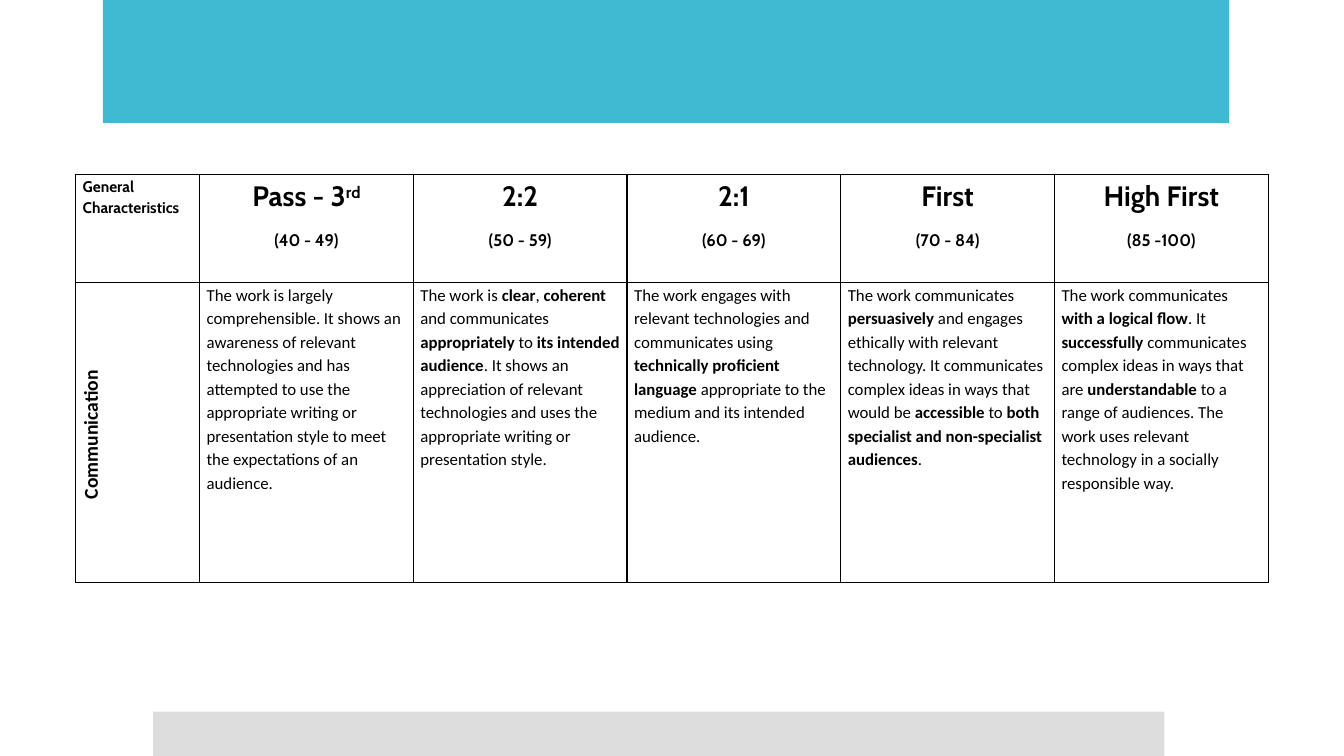
import pptx
import pptx.util
import pptx.dml.color
import pptx.enum.shapes
import pptx.enum.text
import pptx.oxml
import pptx.oxml.ns

COLORS = {"band": "40BAD2", "footer": "DDDDDD", "ink": "000000", "paper": "FFFFFF"}
ALIGN = pptx.enum.text.PP_ALIGN
Inches = pptx.util.Inches
Pt = pptx.util.Pt

presentation = pptx.Presentation()
presentation.slide_width = Inches(13.33)
presentation.slide_height = Inches(7.5)
slide = presentation.slides.add_slide(presentation.slide_layouts[6])


def write_text(paragraph, text, size=12, font="Calibri", bold=False, align=ALIGN.LEFT):
    paragraph.alignment = align
    paragraph.line_spacing = 1.15
    paragraph.space_after = Pt(10)
    for index, piece in enumerate(text.split("*")):
        for level, part in enumerate(piece.split("^")):
            if not part:
                continue
            run = paragraph.add_run()
            run.text = part
            run.font.size = Pt(size)
            run.font.name = font
            run.font.bold = bold or index % 2 == 1
            run.font.color.rgb = pptx.dml.color.RGBColor.from_string(COLORS["ink"])
            if level:
                run.font._element.set("baseline", "30000")


grades = [
    ("Pass - 3^rd", "(40 - 49)",
     "The work is largely comprehensible. It shows an awareness of relevant technologies and has "
     "attempted to use the appropriate writing or presentation style to meet the expectations of "
     "an audience."),
    ("2:2", "(50 - 59)",
     "The work is *clear*, *coherent* and communicates *appropriately* to *its intended audience*. "
     "It shows an appreciation of relevant technologies and uses the appropriate writing or "
     "presentation style."),
    ("2:1", "(60 - 69)",
     "The work engages with relevant technologies and communicates using *technically proficient "
     "language* appropriate to the medium and its intended audience."),
    ("First", "(70 - 84)",
     "The work communicates *persuasively* and engages ethically with relevant technology. It "
     "communicates complex ideas in ways that would be *accessible* to *both specialist and "
     "non-specialist audiences*."),
    ("High First", "(85 -100)",
     "The work communicates *with a logical flow*. It *successfully *communicates complex ideas in "
     "ways that are *understandable* to a range of audiences. The work uses relevant technology in "
     "a socially responsible way."),
]

label_width, grade_width = Inches(1.23), Inches(2.12)
row_heights = [Inches(1.07), Inches(2.98)]
table = slide.shapes.add_table(
    len(row_heights), len(grades) + 1, Inches(0.75), Inches(1.73),
    label_width + grade_width * len(grades), sum(row_heights)).table
table.first_row = False
table.horz_banding = False
for row, height in zip(table.rows, row_heights):
    row.height = height
for index, column in enumerate(table.columns):
    column.width = grade_width if index else label_width

for cell in table.iter_cells():
    cell.margin_left = cell.margin_right = Inches(0.07)
    cell.margin_top = cell.margin_bottom = 0
    cell.fill.solid()
    cell.fill.fore_color.rgb = pptx.dml.color.RGBColor.from_string(COLORS["paper"])
    properties = cell._tc.get_or_add_tcPr()
    for position, side in enumerate(["lnL", "lnR", "lnT", "lnB"]):
        border = pptx.oxml.parse_xml(
            f'<a:{side} {pptx.oxml.ns.nsdecls("a")} w="{Pt(1)}"><a:solidFill>'
            f'<a:srgbClr val="{COLORS["ink"]}"/></a:solidFill></a:{side}>')
        properties.insert(position, border)

write_text(table.cell(0, 0).text_frame.paragraphs[0], "General Characteristics",
           size=11, font="Cabin", bold=True)
communication = table.cell(1, 0)
communication._tc.get_or_add_tcPr().set("vert", "vert270")
write_text(communication.text_frame.paragraphs[0], "Communication ",
           size=14, bold=True, align=ALIGN.CENTER)

for column, (grade, marks, description) in enumerate(grades, start=1):
    heading = table.cell(0, column).text_frame
    write_text(heading.paragraphs[0], grade, size=20, font="Cabin", bold=True, align=ALIGN.CENTER)
    write_text(heading.add_paragraph(), marks, font="Cabin", bold=True, align=ALIGN.CENTER)
    write_text(table.cell(1, column).text_frame.paragraphs[0], description)

bars = [("band", 1.02, 0, 11.17, 1.22), ("footer", 1.52, 7.06, 10.03, 0.44)]
for color, left, top, width, height in bars:
    bar = slide.shapes.add_shape(
        pptx.enum.shapes.MSO_SHAPE.RECTANGLE,
        Inches(left), Inches(top), Inches(width), Inches(height))
    bar.shadow.inherit = False
    bar.fill.solid()
    bar.fill.fore_color.rgb = pptx.dml.color.RGBColor.from_string(COLORS[color])
    bar.line.fill.background()

presentation.save("out.pptx")
